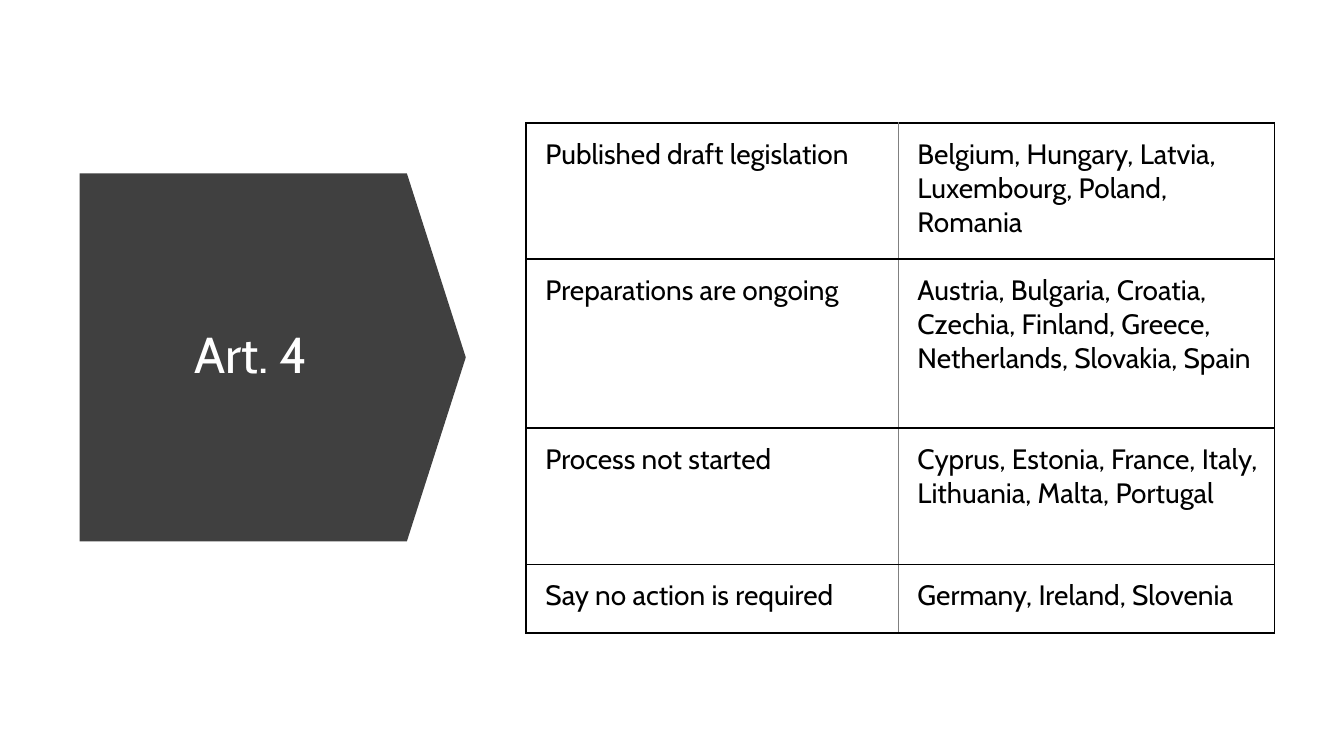
from lxml.etree import SubElement
from pptx import Presentation
from pptx.dml.color import RGBColor
from pptx.enum.shapes import MSO_SHAPE as Shape
from pptx.enum.text import MSO_ANCHOR as Anchor, PP_ALIGN as Align
from pptx.oxml.ns import qn
from pptx.util import Emu, Pt

BLACK = RGBColor(0x00, 0x00, 0x00)
WHITE = RGBColor(0xFF, 0xFF, 0xFF)
GREY = RGBColor(0x80, 0x80, 0x80)
CHARCOAL = RGBColor(0x40, 0x40, 0x40)

EMU_PER_PX = 9144
OUTER, INNER = (BLACK, 1.5), (GREY, 0.5)
COLS = (369, 373)
ROWS = (
    (135, "Published draft legislation",
     "Belgium, Hungary, Latvia, Luxembourg, Poland, Romania"),
    (168, "Preparations are ongoing",
     "Austria, Bulgaria, Croatia, Czechia, Finland, Greece, Netherlands, Slovakia, Spain"),
    (135, "Process not started",
     "Cyprus, Estonia, France, Italy, Lithuania, Malta, Portugal"),
    (68, "Say no action is required",
     "Germany, Ireland, Slovenia"),
)


def px(n):
    """Turn whole px, 100 to the inch, into EMU."""
    return Emu(n * EMU_PER_PX)


def assign(obj, values):
    """Set each attribute named in a dict of format values."""
    for name, value in values.items():
        setattr(obj, name, value)


class SlideBuilder:
    """Hold the style and the current slide."""

    def __init__(self, s, font):
        """Keep the slide and its font name."""
        self.s, self.font = s, font

    def text(self, tf, text, size, color, **para):
        """Put one formatted paragraph into a text frame."""
        p = tf.paragraphs[0]
        assign(p, para)
        r = p.add_run()
        r.text = text
        assign(r.font, {"name": self.font, "size": Pt(size)})
        r.font.color.rgb = color

    def arrow(self, box, turn, adjustments, color):
        """Add a plain turned block arrow."""
        sp = self.s.shapes.add_shape(Shape.DOWN_ARROW, *map(px, box))
        sp.rotation = turn
        for i, value in enumerate(adjustments):
            sp.adjustments[i] = value
        sp.shadow.inherit = False
        sp.fill.solid()
        sp.fill.fore_color.rgb = color
        sp.line.fill.background()

    def title(self, box, text, size, color):
        """Add a centred title."""
        tf = self.s.shapes.add_textbox(*map(px, box)).text_frame
        assign(tf, {"word_wrap": True, "vertical_anchor": Anchor.MIDDLE})
        self.text(tf, text, size, color, alignment=Align.CENTER, line_spacing=0.9)

    def borders(self, cell, **edges):
        """Draw the cell edges given as colour and width."""
        tc_pr = cell._tc.get_or_add_tcPr()
        for i, (side, (color, width)) in enumerate(edges.items()):
            ln = SubElement(tc_pr, qn(f"a:ln{side}"), w=str(Pt(width)))
            fill = SubElement(ln, qn("a:solidFill"))
            SubElement(fill, qn("a:srgbClr"), val=str(color))
            tc_pr.insert(i, ln)

    def table(self, left, top, cols, rows, size):
        """Add a ruled table whose rows hold a height and the cell texts."""
        heights = [row[0] for row in rows]
        box = (left, top, sum(cols), sum(heights))
        t = self.s.shapes.add_table(len(rows), len(cols), *map(px, box)).table
        assign(t, {"first_row": False, "horz_banding": False})
        for col, width in zip(t.columns, cols):
            col.width = px(width)
        for i, (height, *texts) in enumerate(rows):
            t.rows[i].height = px(height)
            for j, text in enumerate(texts):
                cell = t.cell(i, j)
                assign(cell, {"margin_left": px(19), "margin_top": px(14),
                              "margin_right": px(14), "margin_bottom": px(14)})
                cell.fill.background()
                self.text(cell.text_frame, text, size, BLACK)
                self.borders(cell, L=INNER if j else OUTER,
                             R=OUTER if j == len(cols) - 1 else INNER,
                             T=OUTER, B=OUTER)


def main():
    """Build and save the slide."""
    prs = Presentation()
    assign(prs, {"slide_width": px(1333), "slide_height": px(750)})
    b = SlideBuilder(prs.slides.add_slide(prs.slide_layouts[6]), "Cabin")
    b.arrow((88, 163, 365, 383), 270, (1, 0.16), CHARCOAL)
    b.title((105, 215, 288, 279), "Art. 4", 36, WHITE)
    b.table(522, 122, COLS, ROWS, 20)
    prs.save("out.pptx")


if __name__ == "__main__":
    main()
